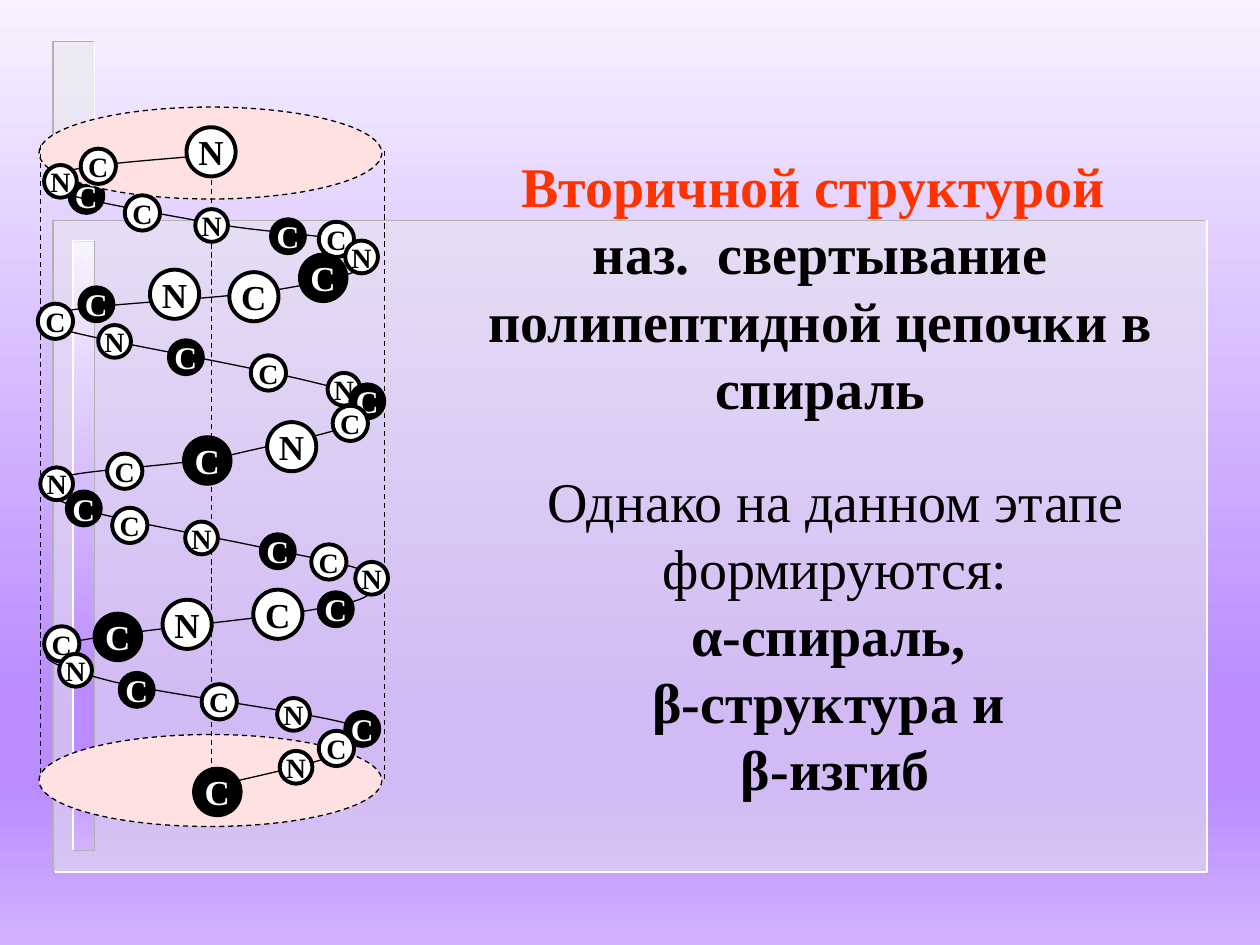
from lxml import etree
from pptx import Presentation
from pptx.dml.color import RGBColor
from pptx.enum.dml import MSO_LINE
from pptx.enum.shapes import MSO_CONNECTOR, MSO_SHAPE
from pptx.enum.text import MSO_ANCHOR, MSO_AUTO_SIZE, PP_ALIGN
from pptx.oxml.ns import qn
from pptx.util import Inches, Pt

DASH = MSO_LINE.DASH
STRAIGHT = MSO_CONNECTOR.STRAIGHT
RECT, OVAL = MSO_SHAPE.RECTANGLE, MSO_SHAPE.OVAL
MIDDLE, TOP = MSO_ANCHOR.MIDDLE, MSO_ANCHOR.TOP
NO_AUTOSIZE = MSO_AUTO_SIZE.NONE
CENTER = PP_ALIGN.CENTER

FONT = "Times New Roman"
COLORS = {"black": "000000", "white": "FFFFFF", "red": "FF3300",
          "pink": "FFE1E1", "panel": "EAEAEA", "edge": "B2B2B2"}
GRADIENT = [(0, "F7F2FF"), (74, "BA8CFF"), (83, "BA8CFF"), (100, "D1B2FF")]

TITLE_BOX = (3.2, 1.14, 6.62, 2.26)
TITLE = [("Вторичной структурой ", "red", True),
         ("наз.  свертывание полипептидной цепочки в спираль", "black", True)]
FORMS_BOX = (3.77, 3.65, 5.72, 2.79)
FORMS = [("Однако на данном этапе формируются:", "black", False),
         ("α-спираль, ", "black", True),
         ("β-структура и ", "black", True),
         ("β-изгиб", "black", True)]

PANELS = [
    {"box": (0.43, 1.75, 9.15, 5.17), "raised": True,
     "upper": (0.42, 1.75, 9.56, 6.92), "lower": (0.44, 1.75, 9.58, 6.92)},
    {"box": (0.58, 1.92, 0.17, 4.83), "raised": False,
     "upper": (0.58, 1.91, 0.75, 6.75), "lower": (0.58, 1.91, 0.75, 6.75)},
    {"box": (0.42, 0.33, 0.33, 1.25), "raised": True,
     "upper": (0.42, 0.33, 0.75, 1.58), "lower": (0.42, 0.33, 0.75, 1.58)}]

CYLINDER_ENDS = [(0.31, 0.85, 2.72, 0.73), (0.31, 5.83, 2.72, 0.73)]
CYLINDER_LINES = [(3.05, 1.2, 6.21), (0.32, 1.15, 6.15), (1.68, 1, 6.46)]

HELIX = [
    (1.67, 1.23),
    (1.22, 1.27), (0.77, 1.3), (0.57, 1.35), (0.37, 1.4), (0.28, 1.45), (0.46, 1.52),
    (0.65, 1.59), (1.29, 1.7), (1.67, 1.77), (2.05, 1.84), (2.52, 1.86), (2.73, 1.91),
    (2.95, 1.97), (3.04, 2.04), (2.94, 2.1), (2.84, 2.17), (2.53, 2.25), (2.13, 2.31),
    (1.73, 2.37), (0.86, 2.41), (0.57, 2.46), (0.28, 2.5), (0.38, 2.53), (0.38, 2.56),
    (0.38, 2.59), (0.16, 2.54), (0.59, 2.64), (1.02, 2.75), (2.75, 3.03), (2.96, 3.19),
    (3.18, 3.35), (2.29, 3.5), (1.88, 3.6), (1.47, 3.7), (0.7, 3.72), (0.48, 3.79),
    (0.27, 3.86), (0.34, 3.93), (0.59, 4.02), (0.84, 4.11), (1.63, 4.25), (2.01, 4.33),
    (2.38, 4.41), (2.7, 4.46), (2.86, 4.52), (3.02, 4.58), (3.02, 4.65), (2.94, 4.71),
    (2.87, 4.76), (2.83, 4.78), (2.42, 4.85), (2.01, 4.92), (0.75, 5.03), (0.48, 5.12),
    (0.22, 5.21), (0.44, 5.29), (0.82, 5.39), (1.2, 5.5), (2.46, 5.65), (2.78, 5.75),
    (3.09, 5.85), (2.88, 5.89), (2.69, 5.98), (2.51, 6.06), (2.08, 6.15), (1.65, 6.25)]

ATOM_KINDS = {
    "n": ("N", 0.26, 16, "white", "black", 2.25),
    "c": ("C", 0.28, 16, "white", "black", 2.25),
    "a": ("C", 0.29, 18, "black", "white", 0.75),
    "N": ("N", 0.39, 20, "white", "black", 2.25),
    "C": ("C", 0.39, 20, "white", "black", 2.25),
    "A": ("C", 0.39, 20, "black", "white", 0.75)}
BACK_ATOMS = [("a", 0.54, 1.41), ("A", 1.01, 1.09)]
FRONT_ATOMS = [
    ("n", 0.35, 1.31), ("N", 1.48, 1.01), ("c", 0.64, 1.18), ("c", 0.99, 1.55),
    ("n", 1.55, 1.66), ("a", 2.14, 1.73), ("c", 2.53, 1.76), ("n", 2.74, 1.91),
    ("A", 2.37, 2.01), ("C", 1.82, 2.16), ("N", 1.19, 2.14), ("N", 2.12, 3.35),
    ("a", 0.62, 2.27), ("c", 0.3, 2.41), ("n", 0.78, 2.58), ("a", 1.33, 2.69),
    ("c", 1.99, 2.82), ("n", 2.6, 2.96), ("a", 2.77, 3.04), ("c", 2.64, 3.22),
    ("A", 1.45, 3.46), ("c", 0.85, 3.6), ("n", 0.32, 3.71), ("a", 0.52, 3.89),
    ("c", 0.89, 4.03), ("n", 1.47, 4.14), ("a", 2.06, 4.23), ("c", 2.47, 4.32),
    ("n", 2.82, 4.46), ("C", 2.01, 4.68), ("a", 2.73, 5.64), ("a", 0.94, 5.33),
    ("a", 2.52, 4.69), ("A", 1.53, 6.09), ("A", 0.74, 4.86), ("N", 1.29, 4.76),
    ("n", 2.22, 5.96), ("n", 2.2, 5.54), ("c", 2.53, 5.8), ("c", 1.6, 5.43),
    ("c", 0.35, 4.97), ("n", 0.47, 5.19)]


def rgb(name):
    return RGBColor.from_string(COLORS[name])


def set_line(line, color, width, dash=None):
    line.color.rgb = rgb(color)
    line.width = Pt(width)
    if dash:
        line.dash_style = dash


def set_gradient(fill, element):
    fill.gradient()
    fill.gradient_angle = 270
    stops = element.find(".//" + qn("a:gsLst"))
    for old in list(stops):
        stops.remove(old)
    for pos, color in GRADIENT:
        gs = etree.SubElement(stops, qn("a:gs"), pos=str(pos * 1000))
        etree.SubElement(gs, qn("a:srgbClr"), val=color)


def add_filled(shapes, kind, box, color):
    sp = shapes.add_shape(kind, *map(Inches, box))
    sp.shadow.inherit = False
    sp.fill.solid()
    sp.fill.fore_color.rgb = rgb(color)
    sp.line.fill.background()
    return sp


def add_path(shapes, points, color, width):
    start, *rest = [tuple(map(Inches, point)) for point in points]
    builder = shapes.build_freeform(*start)
    builder.add_line_segments(rest, close=False)
    sp = builder.convert_to_shape()
    sp.shadow.inherit = False
    sp.fill.background()
    set_line(sp.line, color, width)
    return sp


def add_curve(shapes, points, color, width):
    sp = add_path(shapes, points, color, width)
    outline = sp._element.find(".//" + qn("a:path"))
    segments = outline.findall(qn("a:lnTo"))
    for i in range(0, len(segments), 3):
        curve = etree.SubElement(outline, qn("a:cubicBezTo"))
        for segment in segments[i:i + 3]:
            curve.append(segment[0])
            outline.remove(segment)


def add_panel(shapes, box, raised, upper, lower):
    sp = add_filled(shapes, RECT, box, "panel")
    if raised:
        color = sp._element.find(".//" + qn("a:srgbClr"))
        etree.SubElement(color, qn("a:alpha"), val="50000")
    else:
        set_gradient(sp.fill, sp._element)
    colors = ("edge", "white") if raised else ("white", "edge")
    x1, y1, x2, y2 = upper
    add_path(shapes, [(x2, y1), (x1, y1), (x1, y2)], colors[0], 1)
    x1, y1, x2, y2 = lower
    add_path(shapes, [(x2, y1), (x2, y2), (x1, y2)], colors[1], 1)


def add_run(p, text, size, color, bold):
    p.alignment = CENTER
    r = p.add_run()
    r.text = text
    r.font.name = FONT
    r.font.size = Pt(size)
    r.font.bold = bold
    r.font.color.rgb = rgb(color)


def write_text(sp, box, lines, anchor):
    sp.left, sp.top, sp.width, sp.height = map(Inches, box)
    tf = sp.text_frame
    tf.word_wrap = True
    tf.auto_size = NO_AUTOSIZE
    tf.vertical_anchor = anchor
    for i, (text, color, bold) in enumerate(lines):
        p = tf.add_paragraph() if i else tf.paragraphs[0]
        add_run(p, text, 32, color, bold)


def add_atom(shapes, kind, x, y):
    letter, size, pt, fill, color, outline = ATOM_KINDS[kind]
    sp = add_filled(shapes, OVAL, (x, y, size, size), fill)
    set_line(sp.line, "black", outline)
    tf = sp.text_frame
    tf.word_wrap = False
    tf.vertical_anchor = MIDDLE
    add_run(tf.paragraphs[0], letter, pt, color, True)


def main():
    prs = Presentation()
    prs.slide_width, prs.slide_height = Inches(10), Inches(7.5)
    s = prs.slides.add_slide(prs.slide_layouts[5])
    set_gradient(s.background.fill, s._element)
    frame = s.shapes.add_group_shape().shapes
    for panel in PANELS:
        add_panel(frame, **panel)
    title = s.shapes.title
    title._element.getparent().append(title._element)
    write_text(title, TITLE_BOX, TITLE, MIDDLE)

    model = s.shapes.add_group_shape().shapes
    for atom in BACK_ATOMS:
        add_atom(model, *atom)
    for end in CYLINDER_ENDS:
        sp = add_filled(model, OVAL, end, "pink")
        set_line(sp.line, "black", 0.75, DASH)
    for x, top, bottom in CYLINDER_LINES:
        axis = model.add_connector(STRAIGHT, *map(Inches, (x, top, x, bottom)))
        set_line(axis.line, "black", 0.75, DASH)
        etree.SubElement(axis._element.spPr, qn("a:effectLst"))
    add_curve(model, HELIX, "black", 0.75)
    for atom in FRONT_ATOMS:
        add_atom(model, *atom)

    forms = s.shapes.add_textbox(*map(Inches, FORMS_BOX))
    write_text(forms, FORMS_BOX, FORMS, TOP)
    prs.save("out.pptx")


if __name__ == "__main__":
    main()
